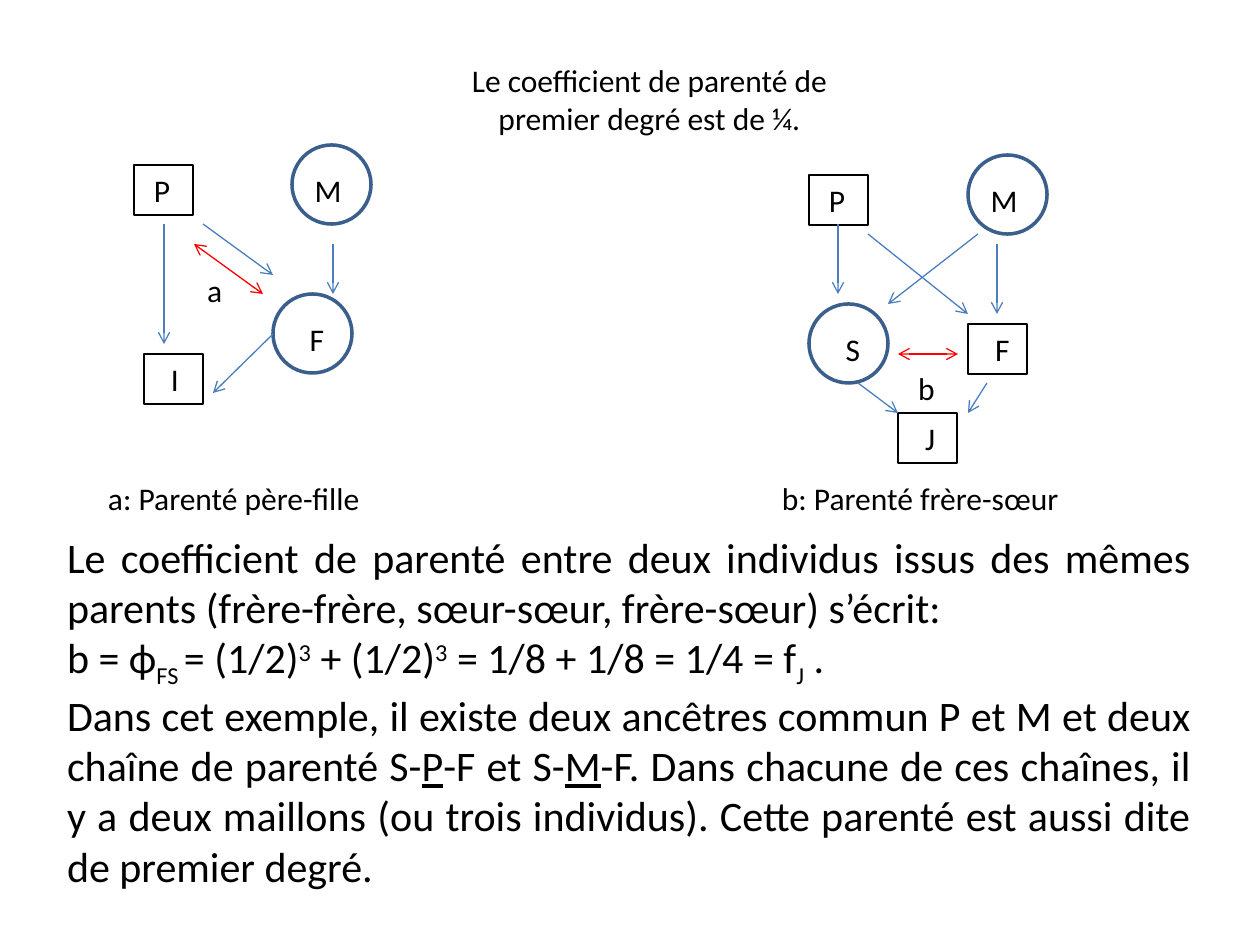
from lxml import etree
from pptx import Presentation
from pptx.dml.color import RGBColor
from pptx.enum.shapes import MSO_CONNECTOR, MSO_SHAPE
from pptx.enum.text import MSO_ANCHOR, MSO_AUTO_SIZE, PP_ALIGN
from pptx.oxml.ns import qn
from pptx.util import Inches, Pt

EMU_PER_PX = Inches(1) / 126
STRAIGHT = MSO_CONNECTOR.STRAIGHT
RECTANGLE, OVAL = MSO_SHAPE.RECTANGLE, MSO_SHAPE.OVAL
TOP = MSO_ANCHOR.TOP
NO_AUTOFIT = MSO_AUTO_SIZE.NONE
LEFT, CENTER, JUSTIFY = PP_ALIGN.LEFT, PP_ALIGN.CENTER, PP_ALIGN.JUSTIFY

FONT = "Calibri"
BLACK, WHITE, RED = "000000", "FFFFFF", "FF0000"
ARROW_BLUE, CIRCLE_BLUE = "4B7EBC", "3A5F8C"
MARGIN_X, MARGIN_Y = 13, 6
SUBSCRIPT, SUPERSCRIPT, UNDERLINE = "subscript", "superscript", "underline"
BASELINES = {SUBSCRIPT: "-25000", SUPERSCRIPT: "30000"}

MEN = [
    ("P", 134, 165, 20), ("I", 144, 354, 27),
    ("P", 809, 175, 20), ("F", 968, 324, 27), ("J", 898, 413, 27),
]
WOMEN = [
    ("M", 292, 145, 11), ("F", 273, 294, 25),
    ("M", 968, 155, 11), ("S", 809, 304, 25),
]
DESCENT_ARROWS = [
    (164, 224, 164, 344), (203, 224, 273, 275),
    (333, 244, 333, 294), (273, 334, 213, 393),
    (838, 224, 838, 294), (868, 234, 968, 314),
    (978, 234, 888, 304), (997, 244, 997, 314),
    (858, 383, 898, 413), (987, 383, 968, 413),
]
KINSHIP_ARROWS = [(194, 244, 263, 294), (898, 354, 958, 354)]
LABELS = [
    ("a", 194, 265, 59, MARGIN_X),
    ("b", 898, 363, 59, 20),
    ("a: Parenté père-fille", 95, 473, 297, MARGIN_X),
    ("b: Parenté frère-sœur", 769, 473, 328, MARGIN_X),
]
TITLE = "Le coefficient de parenté de premier degré est de ¼."
EXPLANATION = [
    [("Le coefficient de parenté entre deux individus issus des mêmes parents "
      "(frère-frère, sœur-sœur, frère-sœur) s’écrit:", None)],
    [("b = ϕ", None), ("FS ", SUBSCRIPT), ("= (1/2)", None), ("3", SUPERSCRIPT),
     (" + (1/2)", None), ("3", SUPERSCRIPT), (" = 1/8 + 1/8 = 1/4 = f", None),
     ("J", SUBSCRIPT), (" .", None)],
    [("Dans cet exemple, il existe deux ancêtres commun P et M et deux chaîne "
      "de parenté S-", None), ("P", UNDERLINE), ("-F et S-", None), ("M", UNDERLINE),
     ("-F. Dans chacune de ces chaînes, il y a deux maillons (ou trois individus). "
      "Cette parenté est aussi dite de premier degré.", None)],
]


def px(length):
    return round(length * EMU_PER_PX)


def color(value):
    return RGBColor.from_string(value)


def add_run(paragraph, text, size, style=None):
    run = paragraph.add_run()
    run.text = text
    run.font.name = FONT
    run.font.size = Pt(size)
    run.font.color.rgb = color(BLACK)
    if style == UNDERLINE:
        run.font.underline = True
    elif style:
        run._r.get_or_add_rPr().set("baseline", BASELINES[style])


def write_text(shape, paragraphs, size=18, align=LEFT, indent=MARGIN_X, drop=MARGIN_Y, right=MARGIN_X):
    frame = shape.text_frame
    frame.word_wrap = True
    frame.auto_size = NO_AUTOFIT
    frame.vertical_anchor = TOP
    frame.margin_left, frame.margin_right = px(indent), px(right)
    frame.margin_top, frame.margin_bottom = px(drop), 0
    for index, runs in enumerate(paragraphs):
        paragraph = frame.add_paragraph() if index else frame.paragraphs[0]
        paragraph.alignment = align
        for text, style in runs:
            add_run(paragraph, text, size, style)


def add_node(slide, kind, name, left, top, width, height, line, weight, indent, drop):
    shape = slide.shapes.add_shape(kind, px(left), px(top), px(width), px(height))
    shape.shadow.inherit = False
    shape.fill.solid()
    shape.fill.fore_color.rgb = color(WHITE)
    shape.line.color.rgb = color(line)
    shape.line.width = Pt(weight)
    write_text(shape, [[(name, None)]], indent=indent, drop=drop, right=0)


def add_man(slide, name, left, top, indent):
    add_node(slide, RECTANGLE, name, left, top, 59, 50, BLACK, 0.75, indent, MARGIN_Y)


def add_woman(slide, name, left, top, indent):
    add_node(slide, OVAL, name, left, top, 79, 79, CIRCLE_BLUE, 2, indent, 14)


def add_arrow(slide, points, line, ends):
    connector = slide.shapes.add_connector(STRAIGHT, *(px(value) for value in points))
    connector.line.color.rgb = color(line)
    connector.line.width = Pt(0.75)
    properties = connector._element.spPr
    outline = properties.find(qn("a:ln"))
    for end in ends:
        etree.SubElement(outline, qn(end)).set("type", "arrow")
    etree.SubElement(properties, qn("a:effectLst"))


def add_text(slide, paragraphs, left, top, width, height, **style):
    box = slide.shapes.add_textbox(px(left), px(top), px(width), px(height))
    write_text(box, paragraphs, **style)


def set_title(slide):
    title = slide.shapes.title
    title.left, title.top, title.width, title.height = px(451), px(55), px(397), px(89)
    write_text(title, [[(TITLE, None)]], align=CENTER)


def main():
    presentation = Presentation()
    presentation.slide_width, presentation.slide_height = Inches(10), Inches(7.5)
    slide = presentation.slides.add_slide(presentation.slide_layouts[5])
    set_title(slide)
    for man in MEN:
        add_man(slide, *man)
    for woman in WOMEN:
        add_woman(slide, *woman)
    for points in DESCENT_ARROWS:
        add_arrow(slide, points, ARROW_BLUE, ["a:tailEnd"])
    for points in KINSHIP_ARROWS:
        add_arrow(slide, points, RED, ["a:headEnd", "a:tailEnd"])
    for text, left, top, width, indent in LABELS:
        add_text(slide, [[(text, None)]], left, top, width, 50, indent=indent)
    add_text(slide, EXPLANATION, 54, 525, 1150, 420, size=24, align=JUSTIFY)
    presentation.save("out.pptx")


if __name__ == "__main__":
    main()
